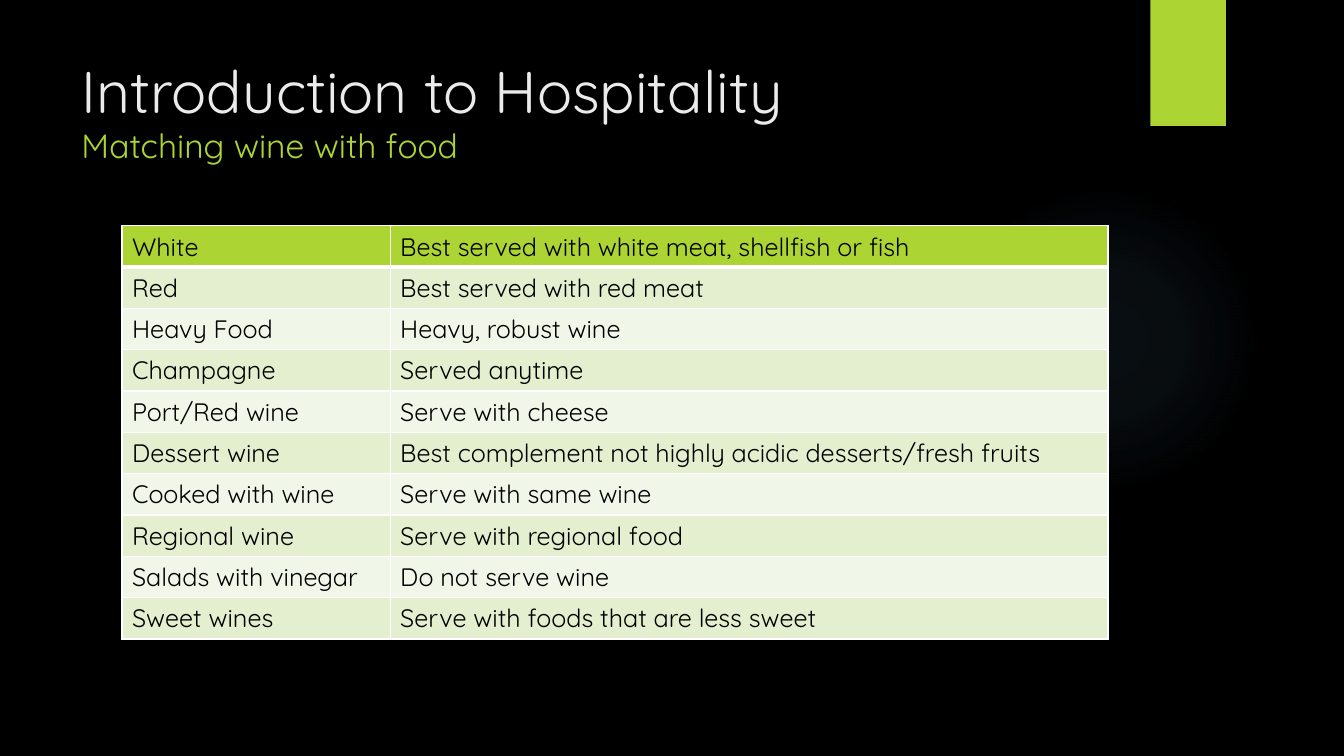
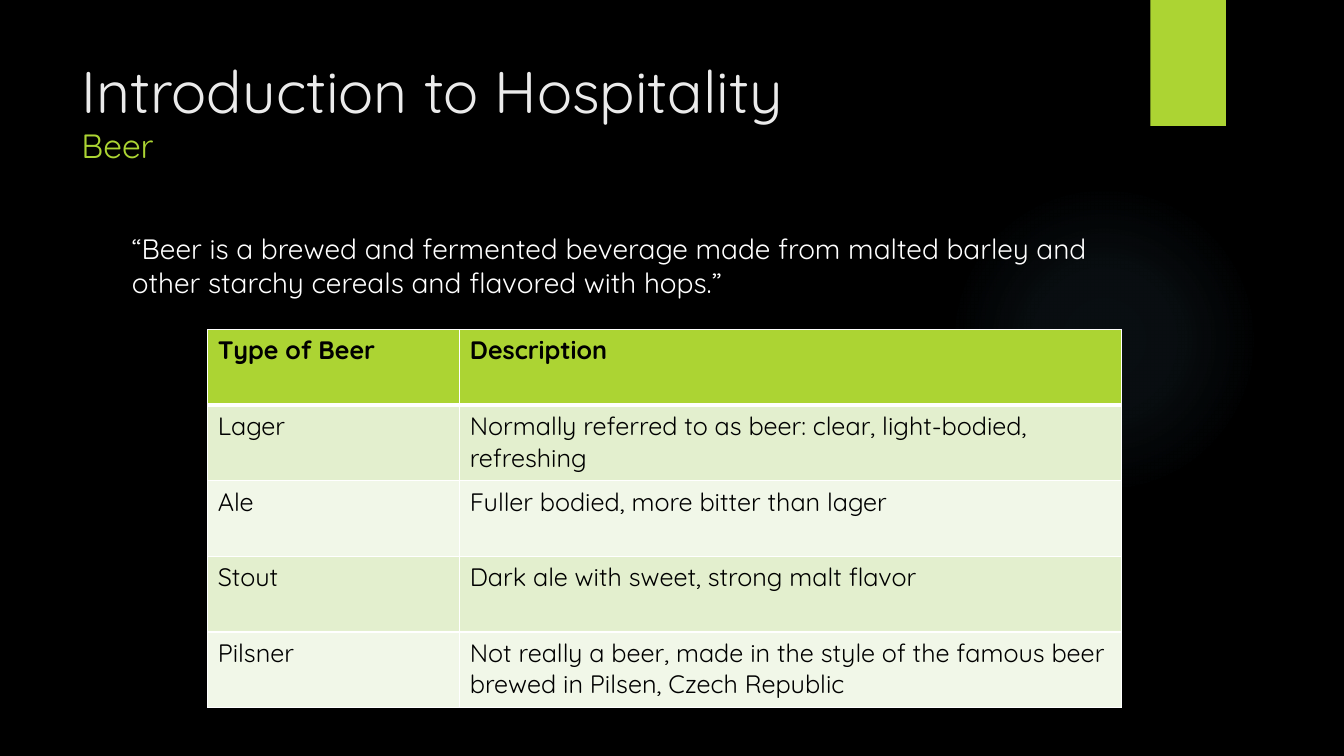
from dataclasses import dataclass
from lxml.etree import SubElement as Sub
from pptx import Presentation
from pptx.dml.color import RGBColor as Rgb
from pptx.enum.shapes import MSO_SHAPE as Kind
from pptx.oxml import parse_xml
from pptx.oxml.ns import nsdecls, qn
from pptx.slide import Slide
from pptx.text.text import Font, TextFrame
from pptx.util import Inches, Pt


@dataclass(frozen=True)
class Theme:
    face: str = "Quicksand"
    back: str = "000000"
    green: str = "ACD433"
    pale: str = "E3EFCE"
    light: str = "F1F7E8"
    ink: str = "000000"
    white: str = "FFFFFF"
    head: str = "EBEBEB"
    glow: str = "7AC4F0"
    title: int = 42
    sub: int = 24
    body: int = 20
    cell: int = 18
    rule: int = 1
    thick: int = 3


@dataclass(frozen=True)
class Grid:
    left: float
    top: float
    cols: tuple[float, ...]
    high: float
    bold: bool
    rows: tuple[tuple[str, ...], ...]


@dataclass(frozen=True)
class Page:
    topic: str
    grid: Grid
    quote: str = ""


THEME = Theme()

PAGES = (
    Page("Matching wine with food", Grid(1.21, 2.24, (2.66, 7.12), 0.41, False, (
        ("White", "Best served with white meat, shellfish or fish"),
        ("Red", "Best served with red meat"),
        ("Heavy Food", "Heavy, robust wine"),
        ("Champagne", "Served anytime"),
        ("Port/Red wine", "Serve with cheese"),
        ("Dessert wine", "Best complement not highly acidic desserts/fresh fruits"),
        ("Cooked with wine", "Serve with same wine"),
        ("Regional wine", "Serve with regional food"),
        ("Salads with vinegar", "Do not serve wine"),
        ("Sweet wines", "Serve with foods that are less sweet"),
    ))),
    Page("Beer", Grid(2.06, 3.27, (2.5, 6.56), 0.75, True, (
        ("Type of Beer", "Description"),
        ("Lager", "Normally referred to as beer: clear, light-bodied, refreshing"),
        ("Ale", "Fuller bodied, more bitter than lager"),
        ("Stout", "Dark ale with sweet, strong malt flavor"),
        ("Pilsner", "Not really a beer, made in the style of the famous beer "
                    "brewed in Pilsen, Czech Republic"),
    )), "“Beer is a brewed and fermented beverage made from malted barley and "
        "other starchy cereals and flavored with hops.”"),
)


def style(font: Font, size: int, color: str, bold: bool = False) -> None:
    form = {"name": THEME.face, "size": Pt(size), "bold": bold}
    for key, value in form.items():
        setattr(font, key, value)
    font.color.rgb = Rgb.from_string(color)


def add_glow(slide: Slide) -> None:
    """Draw the soft round light that fades out behind the content."""
    glow = slide.shapes.add_shape(
        Kind.OVAL, Inches(9.41), Inches(1.83), Inches(3.08), Inches(3.08))
    glow.shadow.inherit = False
    glow.line.fill.background()
    glow.fill.background()
    stops = "".join(
        f'<a:gs pos="{spot * 1000}"><a:srgbClr val="{THEME.glow}">'
        f'<a:alpha val="{alpha * 1000}"/></a:srgbClr></a:gs>'
        for spot, alpha in ((0, 7), (36, 6), (69, 0)))
    grad = parse_xml(
        f'<a:gradFill {nsdecls("a")} rotWithShape="1"><a:gsLst>{stops}</a:gsLst>'
        '<a:path path="circle"><a:fillToRect l="50000" t="50000" r="50000" '
        'b="50000"/></a:path></a:gradFill>')
    props = glow.element.spPr
    props.replace(props.find(qn("a:noFill")), grad)


def add_tab(slide: Slide) -> None:
    """Hang the green marker from the top edge."""
    tab = slide.shapes.add_shape(
        Kind.RECTANGLE, Inches(11.41), Inches(0), Inches(0.75), Inches(1.25))
    tab.fill.solid()
    tab.fill.fore_color.rgb = Rgb.from_string(THEME.green)
    tab.line.fill.background()
    tab.shadow.inherit = False
    shade = Sub(tab.element.spPr.find(qn("a:effectLst")), qn("a:outerShdw"),
                blurRad=str(Pt(3)), dist=str(Pt(2)), dir="5400000", rotWithShape="0")
    color = Sub(shade, qn("a:srgbClr"), val=THEME.back)
    Sub(color, qn("a:alpha"), val="45000")


def add_box(slide: Slide, left: float, top: float, wide: float, high: float) -> TextFrame:
    box = slide.shapes.add_textbox(Inches(left), Inches(top), Inches(wide), Inches(high))
    box.text_frame.word_wrap = True
    return box.text_frame


def add_title(slide: Slide, topic: str) -> None:
    line = add_box(slide, 0.71, 0.49, 10.28, 1.53).paragraphs[0]
    run = line.add_run()
    run.text = "Introduction to Hospitality"
    style(run.font, THEME.title, THEME.head)
    line.add_line_break()
    run = line.add_run()
    run.text = topic
    style(run.font, THEME.sub, THEME.green)


def add_quote(slide: Slide, text: str) -> None:
    run = add_box(slide, 1.21, 2.25, 9.78, 4.59).paragraphs[0].add_run()
    run.text = text
    style(run.font, THEME.body, THEME.white)


def add_grid(slide: Slide, grid: Grid) -> None:
    count = len(grid.rows)
    table = slide.shapes.add_table(
        count, len(grid.cols), Inches(grid.left), Inches(grid.top),
        Inches(sum(grid.cols)), Inches(grid.high * count)).table
    table.horz_banding = False
    for col, wide in zip(table.columns, grid.cols):
        col.width = Inches(wide)
    for i, texts in enumerate(grid.rows):
        table.rows[i].height = Inches(grid.high)
        fill = THEME.green if i == 0 else (THEME.light, THEME.pale)[i % 2]
        edges = {"L": THEME.rule, "R": THEME.rule,
                 "T": THEME.thick if i == 1 else THEME.rule,
                 "B": THEME.thick if i == 0 else THEME.rule}
        for j, text in enumerate(texts):
            cell = table.cell(i, j)
            props = cell._tc.get_or_add_tcPr()
            for side, width in edges.items():
                line = Sub(props, qn(f"a:ln{side}"), w=str(Pt(width)))
                Sub(Sub(line, qn("a:solidFill")), qn("a:srgbClr"), val=THEME.white)
            cell.fill.solid()
            cell.fill.fore_color.rgb = Rgb.from_string(fill)
            run = cell.text_frame.paragraphs[0].add_run()
            run.text = text
            style(run.font, THEME.cell, THEME.ink, grid.bold and i == 0)


def main() -> None:
    deck = Presentation()
    deck.slide_width, deck.slide_height = Inches(13.33), Inches(7.5)
    for page in PAGES:
        slide = deck.slides.add_slide(deck.slide_layouts[6])
        back = slide.background.fill
        back.solid()
        back.fore_color.rgb = Rgb.from_string(THEME.back)
        add_glow(slide)
        add_tab(slide)
        add_title(slide, page.topic)
        if page.quote:
            add_quote(slide, page.quote)
        add_grid(slide, page.grid)
    deck.save("out.pptx")


if __name__ == "__main__":
    main()
